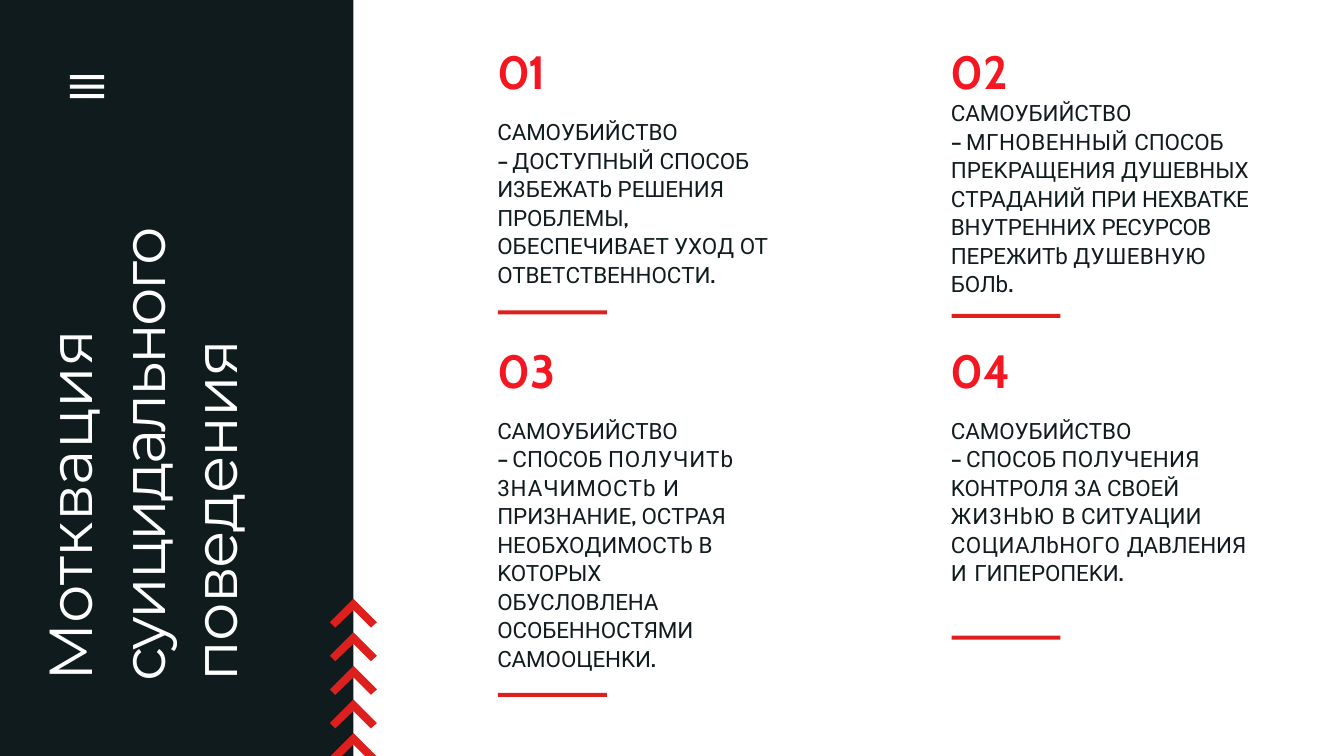
import pptx
import pptx.util
import pptx.dml.color
import pptx.enum.shapes
import pptx.enum.text

Inches = pptx.util.Inches
Pt = pptx.util.Pt
RECT = pptx.enum.shapes.MSO_SHAPE.RECTANGLE

THEME = {
    "dark": "101B1E", "white": "FFFFFF", "red": "DD201D", "number": "F41722",
    "title_size": 65, "number_size": 50, "body_size": 24,
    "title_font": "Montserrat", "number_font": "Cabin", "body_font": "Roboto",
}
BODY = {"font": THEME["body_font"], "size": THEME["body_size"], "color": THEME["dark"]}
MARK = {**BODY, "font": THEME["number_font"], "bold": True}
NUMBER = {"font": THEME["number_font"], "size": THEME["number_size"],
          "color": THEME["number"], "bold": True}
TITLE = {"font": THEME["title_font"], "size": THEME["title_size"], "color": THEME["white"]}


def add_text(p, text, font, size, color, bold=False, spacing=0):
    r = p.add_run()
    r.text = text
    r.font.name = font
    r.font.size = Pt(size)
    r.font.bold = bold
    r.font.color.rgb = pptx.dml.color.RGBColor.from_string(color)
    r.font._element.set("spc", str(round(spacing * 100)))


def paint(sp, color):
    sp.fill.solid()
    sp.fill.fore_color.rgb = pptx.dml.color.RGBColor.from_string(color)
    sp.line.fill.background()
    sp.shadow.inherit = False


prs = pptx.Presentation()
prs.slide_width = Inches(20)
prs.slide_height = Inches(11.25)
s = prs.slides.add_slide(prs.slide_layouts[5])

panel = s.shapes.add_shape(RECT, 0, 0, Inches(5.26), prs.slide_height)
paint(panel, THEME["dark"])

heading = s.shapes.add_textbox(Inches(0.48), Inches(2.71), Inches(3.24), Inches(7.43))
tf = heading.text_frame
tf.word_wrap = True
tf.margin_left, tf.margin_top, tf.margin_right, tf.margin_bottom = Inches(0.01), Inches(0.12), 0, 0
tf._txBody.bodyPr.set("vert", "vert270")
p = tf.paragraphs[0]
p.line_spacing = Pt(77.3)
p.space_before = Pt(8.6)
for text, spacing in [("Мотквация ", -0.1), ("суицидального ", -2.8), ("поведения", -1.1)]:
    add_text(p, text, **TITLE, spacing=spacing)

title = s.shapes.title
title.left, title.top = Inches(7.39), Inches(0.63)
title.width, title.height = Inches(0.85), Inches(0.86)
tf = title.text_frame
tf.word_wrap = True
tf.auto_size = pptx.enum.text.MSO_AUTO_SIZE.NONE
tf.vertical_anchor = pptx.enum.text.MSO_ANCHOR.TOP
tf.margin_left, tf.margin_top, tf.margin_right, tf.margin_bottom = Inches(0.01), Inches(0.01), 0, 0
p = tf.paragraphs[0]
p.alignment = pptx.enum.text.PP_ALIGN.LEFT
p.space_before = Pt(1)
add_text(p, "01", **NUMBER, spacing=-2.2)

cards = [
    (None, 7.39, 1.72, 4.32, 2.59, 4.62, 3, [
        ("ДOСTУПHЫЙ ", 0), ("СПOСOБ ", -0.1), ("И3БEЖATb ", 0),
        ("PEШEHИЯ ПPOБЛEMЫ", -0.1), (", ", -0.1), ("OБEСПEЧИBAET УXOД ", 0),
        ("OT ", -0.2), ("OTBETСTBEHHOСTИ", -0.1), (".", -0.1)]),
    ("02", 14.14, 0.63, 4.72, 3.83, 4.67, 0.3, [
        ("MГHOBEHHЫЙ ", 0.5), ("СПOСOБ ", -0.1), ("ПPEKPAЩEHИЯ ", 0),
        ("ДУШEBHЫX ", -0.1), ("СTPAДAHИЙ ", 0), ("ПPИ ", -0.2),
        ("HEXBATKE ", -0.5), ("BHУTPEHHИX ", -0.1), ("PEСУPСOB ", -0.6),
        ("ПEPEЖИTb ", -0.1), ("ДУШEBHУЮ ", 0.5), ("БOЛb", -0.2), (".", -0.2)]),
    ("03", 7.39, 5.08, 3.77, 4.96, 10.31, 20.2, [
        ("СПOСOБ ", 0), ("ПOЛУЧИTb 3HAЧИMOСTb ", 1), ("И ", 0.5),
        ("ПPИ3HAHИE", 0), (", ", 0), ("OСTPAЯ ", -0.1), ("HEOБXOДИMOСTb ", 0),
        ("B ", -0.5), ("KOTOPЫX OБУСЛOBЛEHA OСOБEHHOСTЯMИ СAMOOЦEHKИ", -0.1),
        (".", -0.1)]),
    ("04", 14.14, 5.08, 4.69, 3.68, 9.46, 20.2, [
        ("СПOСOБ ", 0), ("ПOЛУЧEHИЯ ", 0.3), ("KOHTPOЛЯ 3A ", 0), ("СBOEЙ ", -0.1),
        ("ЖИ3HbЮ ", 1.2), ("B ", 0), ("СИTУAЦИИ ", -0.1), ("СOЦИAЛbHOГO ", 0.5),
        ("ДABЛEHИЯ ", -0.1), ("И ", 1), ("ГИПEPOПEKИ", -0.1), (".", -0.1)]),
]
for number, left, top, width, height, rule_top, gap, runs in cards:
    sp = s.shapes.add_textbox(Inches(left), Inches(top), Inches(width), Inches(height))
    tf = sp.text_frame
    tf.word_wrap = True
    tf.margin_left, tf.margin_right, tf.margin_bottom = Inches(0.01), 0, 0
    tf.margin_top = Inches(0.01 if number else 0.04)
    p = tf.paragraphs[0]
    if number:
        p.space_before = Pt(1)
        add_text(p, number, **NUMBER, spacing=-0.2)
        p = tf.add_paragraph()
    p.space_before = Pt(gap)
    add_text(p, "СAMOУБИЙСTBO", **BODY, spacing=-0.1)
    p = tf.add_paragraph()
    p.line_spacing = 1.06
    add_text(p, "– ", **MARK, spacing=-1)
    for text, spacing in runs:
        add_text(p, text, **(MARK if text in (", ", ".") else BODY), spacing=spacing)

    rule = s.shapes.add_shape(RECT, Inches(left + 0.02), Inches(rule_top), Inches(1.62), Inches(0.06))
    paint(rule, THEME["red"])

center = 5.26
contours = [[(center + dx, 8.91 + 0.5 * i + dy) for dx, dy in
             [(0.35, 0.35), (0, 0), (-0.35, 0.35), (-0.27, 0.43), (0, 0.17), (0.26, 0.43)]]
            for i in range(4)]
contours.append([(center + dx, y) for dx, y in
                 [(0.34, 11.25), (0, 10.91), (-0.34, 11.25), (-0.17, 11.25), (0, 11.08), (0.17, 11.25)]])
fb = None
for contour in contours:
    points = [(Inches(x), Inches(y)) for x, y in contour]
    if fb is None:
        fb = s.shapes.build_freeform(*points[0])
    else:
        fb.move_to(*points[0])
    fb.add_line_segments(points[1:], close=True)
paint(fb.convert_to_shape(), THEME["red"])

for i in range(3):
    bar = s.shapes.add_shape(RECT, Inches(1.04), Inches(1.12 + 0.14 * i), Inches(0.51), Inches(0.06))
    paint(bar, THEME["white"])

prs.save("out.pptx")
